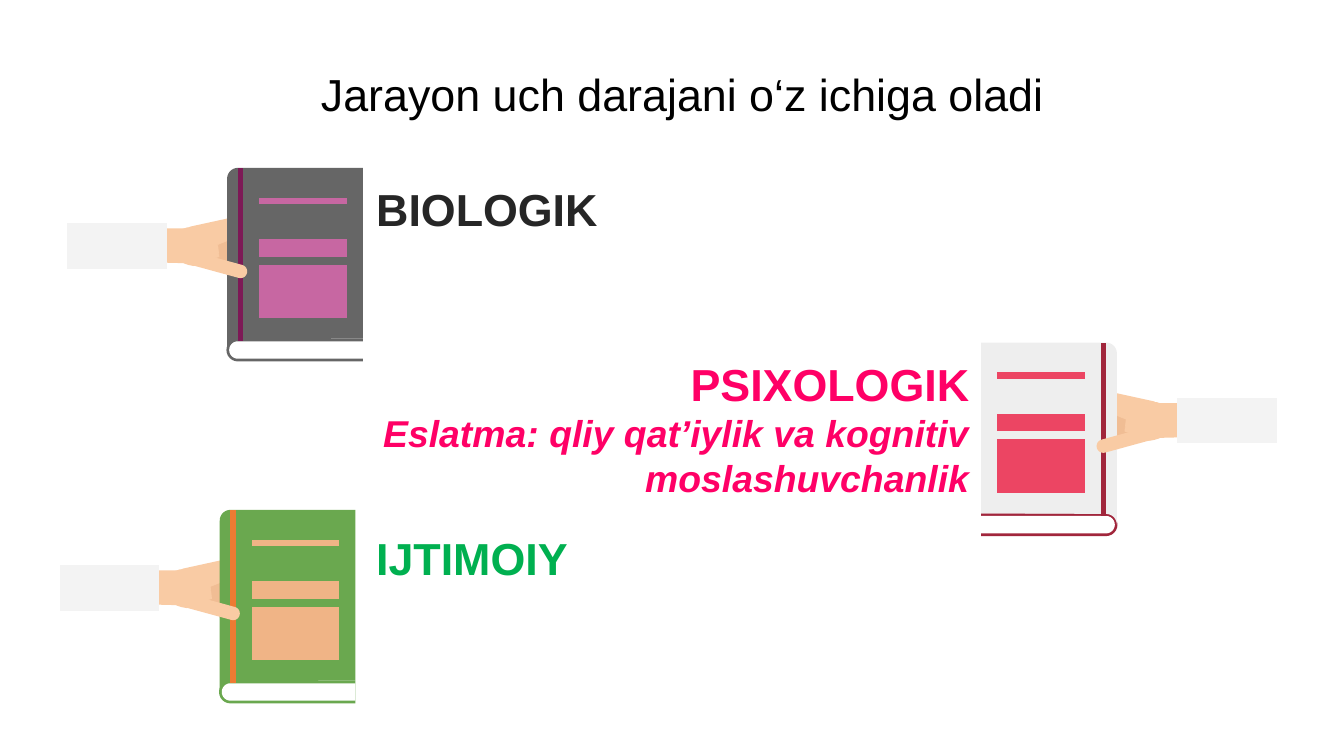
from dataclasses import dataclass
from math import atan2, cos, degrees, radians, sin

from pptx import Presentation
from pptx.dml.color import RGBColor
from pptx.enum.text import MSO_ANCHOR, PP_ALIGN
from pptx.shapes.group import GroupShape
from pptx.slide import Slide
from pptx.util import Cm, Pt

LEFT, CENTER, RIGHT = PP_ALIGN.LEFT, PP_ALIGN.CENTER, PP_ALIGN.RIGHT
MIDDLE, BOTTOM = MSO_ANCHOR.MIDDLE, MSO_ANCHOR.BOTTOM
FONT = "Arial"
UNIT = Cm(2.54) / 100
ARC_STEPS = 12
FINGER = 4.5
SPINE, FORE_EDGE = 127, 220
COLORS = {
    "title": "000000", "biology": "262626", "psychology": "FF0066", "social": "00B050",
    "shade": "F0BD94", "skin": "F9CBA4", "light skin": "FDD5B5", "sleeve": "F3F3F3",
    "pages": "FFFFFF", "gray": "666666", "plum": "7D1956", "orchid": "C767A2",
    "green": "6AA84F", "orange": "ED7B33", "peach": "F0B486",
    "mist": "EEEEEE", "wine": "A1263C", "coral": "EC4563",
}
Outline = list[tuple[float, float]]


@dataclass
class Part:
    """A filled outline in hundredths of an inch."""
    color: str
    outline: Outline
    lined: bool = False


@dataclass
class Book:
    """A held book, placed in hundredths of an inch from the sleeve's end."""
    x: float
    y: float
    direction: int
    colors: dict[str, str]


@dataclass
class Line:
    """One paragraph of a text box."""
    text: str
    color: str
    size: int = 24
    bold: bool = True
    italic: bool = False


@dataclass
class Caption:
    """A text box with its place in centimetres."""
    box: tuple[float, float, float, float]
    lines: list[Line]
    align: PP_ALIGN = LEFT
    anchor: MSO_ANCHOR = BOTTOM


def arc(x: float, y: float, radius: float, start: float, end: float) -> Outline:
    """Return points on an arc, with angles in degrees clockwise from the right."""
    angles = [radians(start + (end - start) * i / ARC_STEPS) for i in range(ARC_STEPS + 1)]
    return [(x + radius * cos(angle), y + radius * sin(angle)) for angle in angles]


def capsule(x0: float, y0: float, x1: float, y1: float, radius: float = FINGER) -> Outline:
    """Return a bar with round ends about two centres."""
    turn = degrees(atan2(y1 - y0, x1 - x0))
    return arc(x0, y0, radius, turn + 90, turn + 270) + arc(x1, y1, radius, turn - 90, turn + 90)


def band(left: float, top: float, right: float, bottom: float) -> Outline:
    """Return the corners of a rectangle."""
    return [(left, top), (right, top), (right, bottom), (left, bottom)]


def page_block(radius: float) -> Outline:
    """Return the book's lower edge, round at the spine."""
    middle = 135.5
    return arc(SPINE, middle, radius, 90, 270) + [
        (FORE_EDGE, middle - radius), (FORE_EDGE, middle + radius)]


COVER = (arc(SPINE, 8, 8, 270, 180) + arc(SPINE, 135.5, 8, 180, 270)
         + [(FORE_EDGE, SPINE), (FORE_EDGE, 0)])
PARTS = [
    Part("shade", capsule(137, 78, 131, 53)),
    Part("shade", capsule(123, 78, 126, 54)),
    Part("shade", [(94, 48), (123, 42), (136, 63), (133, 78), (97, 63)]),
    Part("skin", capsule(92, 58, 95, 59, 14)),
    Part("skin", capsule(93, 48, 125, 41)),
    Part("skin", capsule(141, 52, 123, 41)),
    Part("light skin", capsule(152, 74, 141, 52)),
    Part("skin", [(127, 51), (112, 57), (113, 66), (100, 70), (90, 58), (101, 44), (118, 42)],
         lined=True),
    Part("skin", [(91, 71), (51, 70), (46, 55), (61, 45), (90, 45)]),
    Part("sleeve", band(0, 41, 74, 75)),
    Part("edge", page_block(8.5)),
    Part("pages", page_block(6.5)),
    Part("cover", COVER),
    Part("spine", band(SPINE, 0, SPINE + 4, 129)),
    *(Part("label", band(143, top, 208, bottom)) for top, bottom in ((72, 112), (53, 66), (22, 27))),
    Part("skin", capsule(96, 68, 129, 77, 5)),
]
BOOKS = [
    Book(50, 125, 1, {"cover": "gray", "edge": "gray", "spine": "plum", "label": "orchid"}),
    Book(44.5, 379.5, 1, {"cover": "green", "edge": "green", "spine": "orange", "label": "peach"}),
    Book(950, 255, -1, {"cover": "mist", "edge": "wine", "spine": "wine", "label": "coral"}),
]
CAPTIONS = [
    Caption((1.27, 1.14, 23.24, 1.27),
            [Line("Jarayon uch darajani o‘z ichiga oladi", "title", bold=False)], CENTER, MIDDLE),
    Caption((6.86, 3.43, 6.88, 1.27), [Line("BIOLOGIK", "biology")]),
    Caption((6.86, 10.03, 6.88, 1.27), [Line("IJTIMOIY", "social")]),
    Caption((6.73, 6.58, 11.84, 3.12),
            [Line("PSIXOLOGIK", "psychology"),
             Line("Eslatma: qliy qat’iylik va kognitiv moslashuvchanlik", "psychology", 20,
                  italic=True)], RIGHT),
]


def draw_part(group: GroupShape, book: Book, part: Part) -> None:
    """Draw one part of a held book."""
    points = [(round((book.x + book.direction * x) * UNIT), round((book.y + y) * UNIT))
              for x, y in part.outline]
    builder = group.shapes.build_freeform(*points[0])
    builder.add_line_segments(points[1:], close=True)
    shape = builder.convert_to_shape()
    shape.shadow.inherit = False
    color = RGBColor.from_string(COLORS[book.colors.get(part.color, part.color)])
    shape.fill.solid()
    shape.fill.fore_color.rgb = color
    if part.lined:
        shape.line.color.rgb = color
        shape.line.width = Pt(0.34)
    else:
        shape.line.fill.background()


def draw_book(slide: Slide, book: Book) -> None:
    """Draw a hand holding a book as one group."""
    group = slide.shapes.add_group_shape()
    for part in PARTS:
        draw_part(group, book, part)


def draw_caption(slide: Slide, caption: Caption) -> None:
    """Draw a text box and format its paragraphs."""
    box = slide.shapes.add_textbox(*(Cm(length) for length in caption.box))
    frame = box.text_frame
    frame.word_wrap = True
    frame.vertical_anchor = caption.anchor
    frame.margin_left = frame.margin_right = frame.margin_top = frame.margin_bottom = Cm(0.25)
    frame.text = "\n".join(line.text for line in caption.lines)
    for para, line in zip(frame.paragraphs, caption.lines):
        para.alignment = caption.align
        font = para.runs[0].font
        font.name, font.size = FONT, Pt(line.size)
        font.bold, font.italic = line.bold, line.italic
        font.color.rgb = RGBColor.from_string(COLORS[line.color])


def main() -> None:
    """Build the deck and save it."""
    deck = Presentation()
    deck.slide_width, deck.slide_height = Cm(25.4), Cm(14.29)
    page = deck.slides.add_slide(deck.slide_layouts[6])
    for book in BOOKS:
        draw_book(page, book)
    for caption in CAPTIONS:
        draw_caption(page, caption)
    deck.save("out.pptx")


if __name__ == "__main__":
    main()
